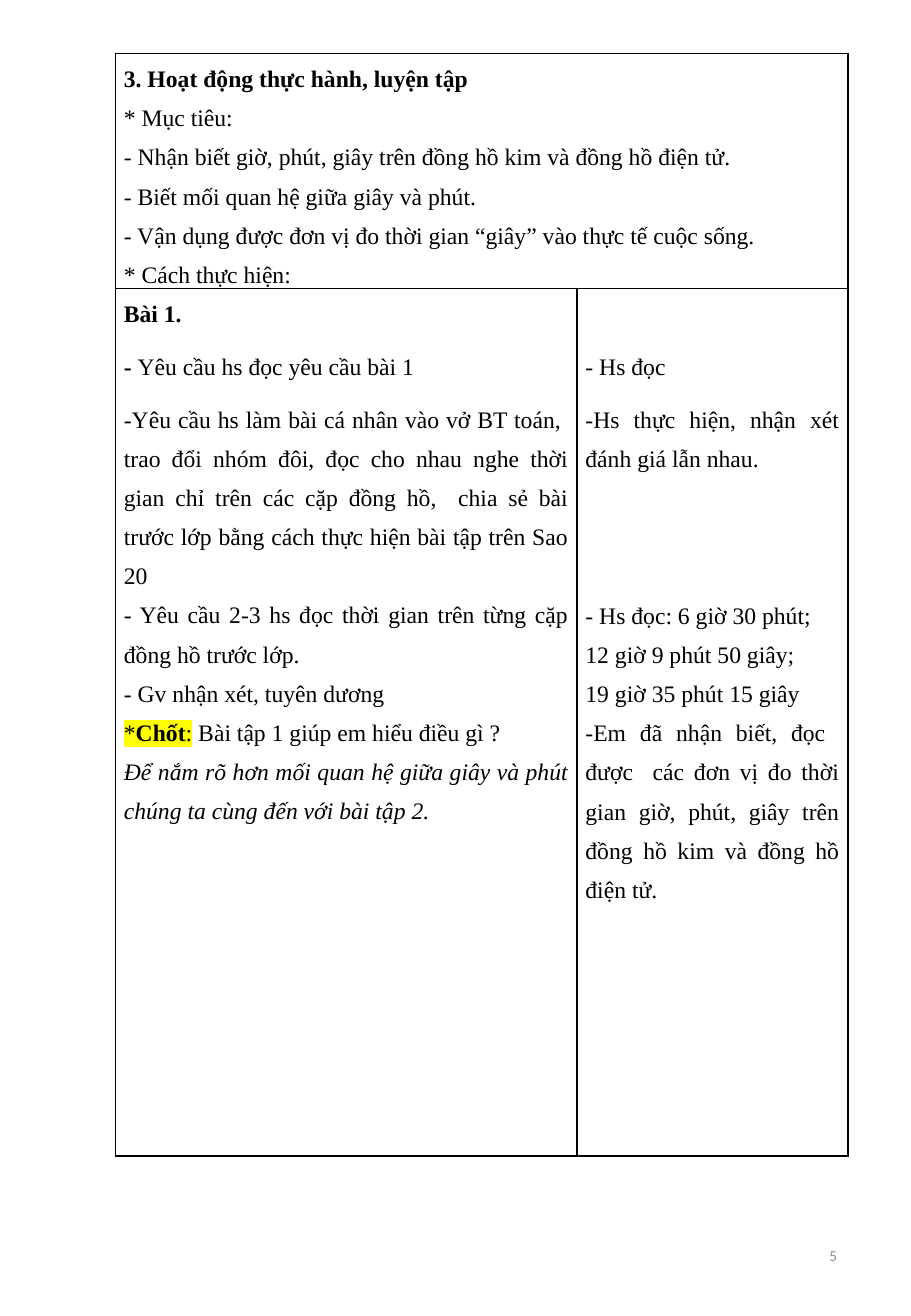
"""Build one page of a maths lesson plan: a bordered two-column activity table."""
from lxml import etree
from pptx import Presentation
from pptx.dml.color import RGBColor
from pptx.enum.text import MSO_ANCHOR, PP_ALIGN
from pptx.oxml.ns import qn
from pptx.util import Inches, Pt

LEFT, RIGHT, JUSTIFY = PP_ALIGN.LEFT, PP_ALIGN.RIGHT, PP_ALIGN.JUSTIFY
MIDDLE = MSO_ANCHOR.MIDDLE

WIDTH, HEIGHT = 7.5, 10.83
BLACK, GREY, YELLOW = "000000", "8C8C8C", "FFFF00"
BODY = {"name": "Times New Roman", "size": Pt(14)}
FOOTER = {"name": "Calibri", "size": Pt(9)}
BOLD, ITALIC = {"bold": True}, {"italic": True}
MARKED, BOLD_MARKED = {"highlight": YELLOW}, {"bold": True, "highlight": YELLOW}
LINE_SPACING, LINE_POINTS, GAP_POINTS = 1.5, 23.25, 8
GAP = {"space_after": Pt(GAP_POINTS)}
THREE_LINES = {"space_before": Pt(3 * LINE_POINTS)}

OBJECTIVES = [
    ([("3. Hoạt động thực hành, luyện\u00a0tập", BOLD)], {}),
    ([("* Mục tiêu:", {})], {}),
    ([("- Nhận biết giờ, phút, giây trên đồng hồ kim và đồng hồ điện tử.", {})], {}),
    ([("- Biết mối quan hệ giữa giây và phút.", {})], {}),
    ([("- Vận dụng được đơn vị đo thời gian “giây” vào thực tế cuộc sống.", {})], {}),
    ([("* Cách thực hiện:", {})], {}),
]
TEACHER = [
    ([("Bài 1. ", BOLD)], GAP),
    ([("- ", BOLD), ("Yêu cầu hs đọc yêu cầu bài 1", {})], GAP),
    ([("-Yêu cầu hs làm bài cá nhân vào vở BT toán,  trao đổi nhóm đôi, đọc cho nhau "
       "nghe thời gian chỉ trên các cặp đồng hồ,  chia sẻ bài trước lớp bằng cách "
       "thực hiện bài tập trên Sao 20", {})], {}),
    ([("- Yêu cầu 2-3 hs đọc thời gian trên từng cặp đồng hồ trước lớp.", {})], {}),
    ([("- Gv nhận xét, tuyên dương", {})], {}),
    ([("*", MARKED), ("Chốt", BOLD_MARKED), (":", MARKED),
      (" Bài tập 1 giúp em hiểu điều gì ? ", {})], {}),
    ([("Để nắm rõ hơn mối quan hệ giữa giây và phút chúng ta cùng đến với bài tập 2.",
       ITALIC)], GAP),
]
PUPILS = [
    ([("- Hs đọc", {})], GAP),
    ([("-Hs thực hiện, nhận xét đánh giá lẫn nhau.", {})], {}),
    ([("- Hs đọc: 6 giờ 30 phút; ", {})], THREE_LINES),
    ([("12 giờ 9 phút 50 giây; ", {})], {}),
    ([("19 giờ 35 phút 15 giây", {})], {}),
    ([("-Em đã nhận biết, đọc  được  các đơn vị đo thời gian giờ, phút, giây trên "
       "đồng hồ kim và đồng hồ điện tử.", {})], GAP),
]
PAGE_NUMBER = [([("5", {})], {})]

TABLE_LEFT, TABLE_TOP = 0.95, 0.44
COLUMNS, ROWS = [3.8, 2.23], [1.93, 7.14]
PUPILS_TOP = Pt(LINE_POINTS + GAP_POINTS)
CELLS = [
    (0, 0, OBJECTIVES, LEFT, 0),
    (1, 0, TEACHER, JUSTIFY, 0),
    (1, 1, PUPILS, JUSTIFY, PUPILS_TOP),
]


def color(value):
    """Turn a hex string into a colour."""
    return RGBColor.from_string(value)


def apply(target, values):
    """Set every attribute named in a dict."""
    for name, value in values.items():
        setattr(target, name, value)


def add_solid_fill(parent, value):
    """Append a solid fill to a drawing element."""
    fill = etree.SubElement(parent, qn("a:solidFill"))
    etree.SubElement(fill, qn("a:srgbClr"), val=value)


def highlight(run, value):
    """Put a marker colour behind a run."""
    marker = etree.Element(qn("a:highlight"))
    etree.SubElement(marker, qn("a:srgbClr"), val=value)
    run.font.fill._xPr.find(qn("a:solidFill")).addnext(marker)


def write(text_frame, paragraphs, font, ink, paragraph_format):
    """Fill a text frame with formatted paragraphs."""
    for index, (runs, spacing) in enumerate(paragraphs):
        paragraph = text_frame.add_paragraph() if index else text_frame.paragraphs[0]
        apply(paragraph, {"space_before": Pt(0), "space_after": Pt(0),
                          **paragraph_format, **spacing})
        for text, style in runs:
            run = paragraph.add_run()
            run.text = text
            settings = {"bold": False, "italic": False, **font, **style}
            marker = settings.pop("highlight", None)
            apply(run.font, settings)
            run.font.color.rgb = color(ink)
            if marker:
                highlight(run, marker)


def add_borders(cell):
    """Draw a thin black line on each side of a cell."""
    properties = cell._tc.get_or_add_tcPr()
    for position, side in enumerate(("a:lnL", "a:lnR", "a:lnT", "a:lnB")):
        line = etree.Element(qn(side), w=str(Pt(1)))
        add_solid_fill(line, BLACK)
        properties.insert(position, line)


def add_lesson_table(slide):
    """Add the activity table with its merged heading row."""
    table = slide.shapes.add_table(
        len(ROWS), len(COLUMNS), Inches(TABLE_LEFT), Inches(TABLE_TOP),
        Inches(sum(COLUMNS)), Inches(sum(ROWS))).table
    apply(table, {"first_row": False, "horz_banding": False})
    for column, width in zip(table.columns, COLUMNS):
        column.width = Inches(width)
    for row, height in zip(table.rows, ROWS):
        row.height = Inches(height)
    table.cell(0, 0).merge(table.cell(0, 1))
    for cell in table.iter_cells():
        cell.fill.background()
        add_borders(cell)
    for row, column, paragraphs, alignment, top in CELLS:
        cell = table.cell(row, column)
        apply(cell, {"margin_left": Inches(0.07), "margin_right": Inches(0.07),
                     "margin_top": top, "margin_bottom": 0})
        write(cell.text_frame, paragraphs, BODY, BLACK,
              {"alignment": alignment, "line_spacing": LINE_SPACING})


def add_page_number(slide):
    """Add the page number at the lower right."""
    box = slide.shapes.add_textbox(Inches(5.3), Inches(10.04), Inches(1.69), Inches(0.58))
    apply(box.text_frame, {"word_wrap": True, "vertical_anchor": MIDDLE})
    write(box.text_frame, PAGE_NUMBER, FOOTER, GREY, {"alignment": RIGHT})


def main():
    """Build and save the presentation."""
    presentation = Presentation()
    apply(presentation, {"slide_width": Inches(WIDTH), "slide_height": Inches(HEIGHT)})
    slide = presentation.slides.add_slide(presentation.slide_layouts[6])
    add_lesson_table(slide)
    add_page_number(slide)
    presentation.save("out.pptx")


if __name__ == "__main__":
    main()
